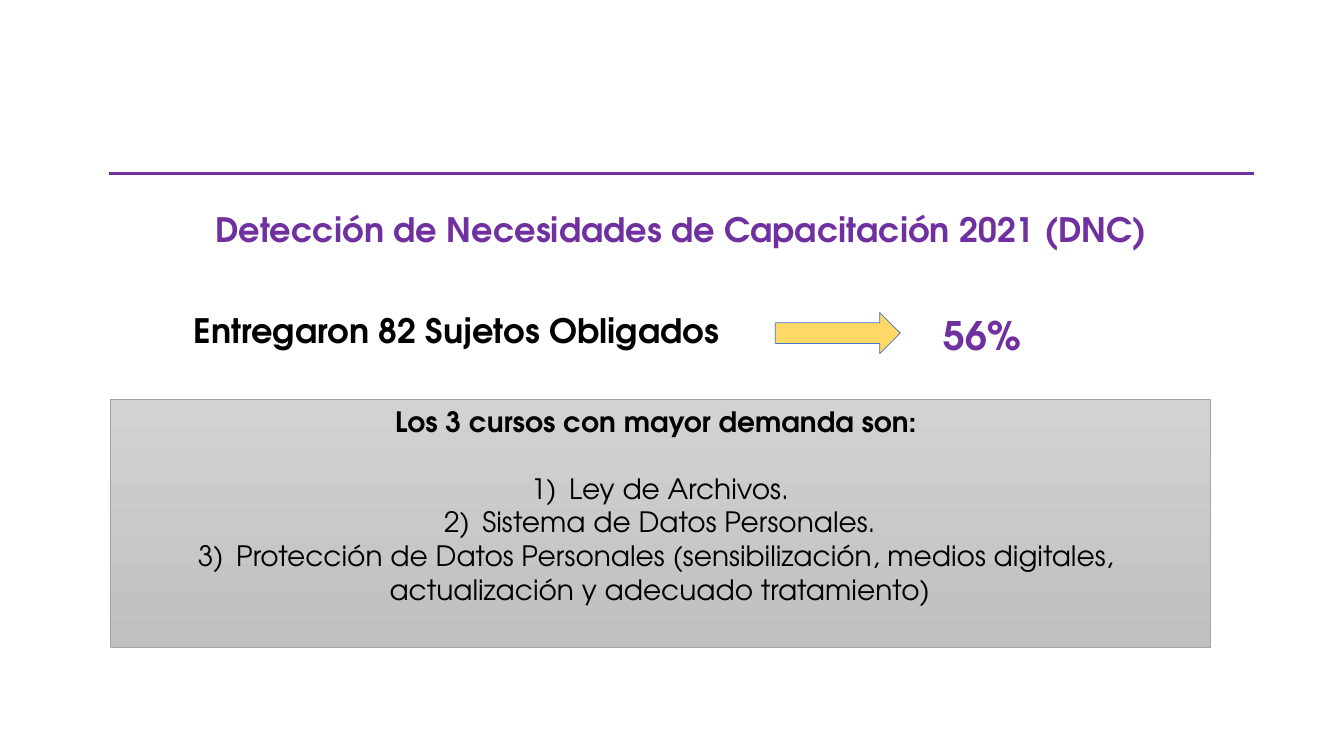
from dataclasses import dataclass

from lxml.etree import SubElement
from pptx import Presentation
from pptx.dml.color import RGBColor
from pptx.enum.shapes import MSO_CONNECTOR, MSO_SHAPE
from pptx.enum.text import MSO_ANCHOR, PP_ALIGN
from pptx.oxml.ns import qn
from pptx.util import Inches, Pt


@dataclass(frozen=True)
class Theme:
    """Colours, font and type sizes of the slide."""

    font: str = "TeX Gyre Adventor"
    purple: str = "7030A0"
    black: str = "000000"
    arrow_fill: str = "FFD966"
    arrow_line: str = "4472C4"
    panel_top: str = "D2D2D2"
    panel_bottom: str = "C0C0C0"
    panel_line: str = "A5A5A5"
    body_size: int = 20
    heading_size: int = 24
    figure_size: int = 28


THEME = Theme()
COURSES = [
    "Ley de Archivos.",
    "Sistema de Datos Personales.",
    "Protección de Datos Personales (sensibilización, medios digitales, ",
]


def rgb(value):
    """Turn a hex string into a colour."""
    return RGBColor.from_string(value)


def add_run(paragraph, text, size, color, bold=False, align=PP_ALIGN.CENTER):
    """Write one styled run in an aligned paragraph."""
    paragraph.alignment = align
    run = paragraph.add_run()
    run.text = text
    run.font.name = THEME.font
    run.font.size = Pt(size)
    run.font.bold = bold
    run.font.color.rgb = rgb(color)


def add_label(slide, box, text, size, color, align=PP_ALIGN.CENTER):
    """Add a bold one-line text box."""
    label = slide.shapes.add_textbox(*map(Inches, box))
    label.text_frame.word_wrap = True
    add_run(label.text_frame.paragraphs[0], text, size, color, True, align)


def add_rule(slide, left, right, top):
    """Add the horizontal rule above the title."""
    rule = slide.shapes.add_connector(
        MSO_CONNECTOR.STRAIGHT, Inches(left), Inches(top), Inches(right), Inches(top)
    )
    rule.line.color.rgb = rgb(THEME.purple)
    rule.line.width = Pt(2.25)
    SubElement(rule._element.spPr, qn("a:effectLst"))


def add_block(slide, kind, box, line_color):
    """Add a thinly outlined shape without shadow."""
    block = slide.shapes.add_shape(kind, *map(Inches, box))
    block.shadow.inherit = False
    block.line.color.rgb = rgb(line_color)
    block.line.width = Pt(0.5)
    return block


def add_arrow(slide, box):
    """Add the arrow leading to the percentage."""
    arrow = add_block(slide, MSO_SHAPE.RIGHT_ARROW, box, THEME.arrow_line)
    arrow.fill.solid()
    arrow.fill.fore_color.rgb = rgb(THEME.arrow_fill)


def number_paragraph(paragraph):
    """Give a paragraph automatic numbering with a hanging indent."""
    properties = paragraph._p.get_or_add_pPr()
    properties.set("marL", str(Inches(0.38)))
    properties.set("indent", str(Inches(-0.38)))
    SubElement(properties, qn("a:buFont"), typeface="+mj-lt")
    SubElement(properties, qn("a:buAutoNum"), type="arabicParenR")


def add_course_panel(slide, box):
    """Add the shaded panel listing the courses in demand."""
    panel = add_block(slide, MSO_SHAPE.RECTANGLE, box, THEME.panel_line)
    panel.fill.gradient()
    panel.fill.gradient_angle = 270
    for stop, color in zip(panel.fill.gradient_stops, (THEME.panel_top, THEME.panel_bottom)):
        stop.color.rgb = rgb(color)
    frame = panel.text_frame
    frame.word_wrap = True
    frame.vertical_anchor = MSO_ANCHOR.TOP
    add_run(frame.paragraphs[0], "Los 3 cursos con mayor demanda son: ",
            THEME.body_size, THEME.black, True)
    for index, course in enumerate(COURSES):
        item = frame.add_paragraph()
        if index == 0:
            item.space_before = Pt(24)
        number_paragraph(item)
        add_run(item, course, THEME.body_size, THEME.black)
    add_run(frame.add_paragraph(), "actualización y adecuado tratamiento)",
            THEME.body_size, THEME.black)


def main():
    """Build the slide and save it."""
    deck = Presentation()
    deck.slide_width, deck.slide_height = Inches(13.33), Inches(7.5)
    slide = deck.slides.add_slide(deck.slide_layouts[6])
    add_rule(slide, 1.08, 12.44, 1.72)
    add_label(slide, (0.75, 2.02, 12.01, 0.5),
              "Detección de Necesidades de Capacitación 2021 (DNC)",
              THEME.heading_size, THEME.purple)
    add_label(slide, (1.51, 3.03, 6.03, 0.5), "Entregaron 82 Sujetos Obligados",
              THEME.heading_size, THEME.black)
    add_label(slide, (9.26, 3.04, 1.06, 0.57), "56%",
              THEME.figure_size, THEME.purple, PP_ALIGN.LEFT)
    add_arrow(slide, (7.69, 3.1, 1.24, 0.41))
    add_course_panel(slide, (1.09, 3.96, 10.91, 2.46))
    deck.save("out.pptx")


if __name__ == "__main__":
    main()
